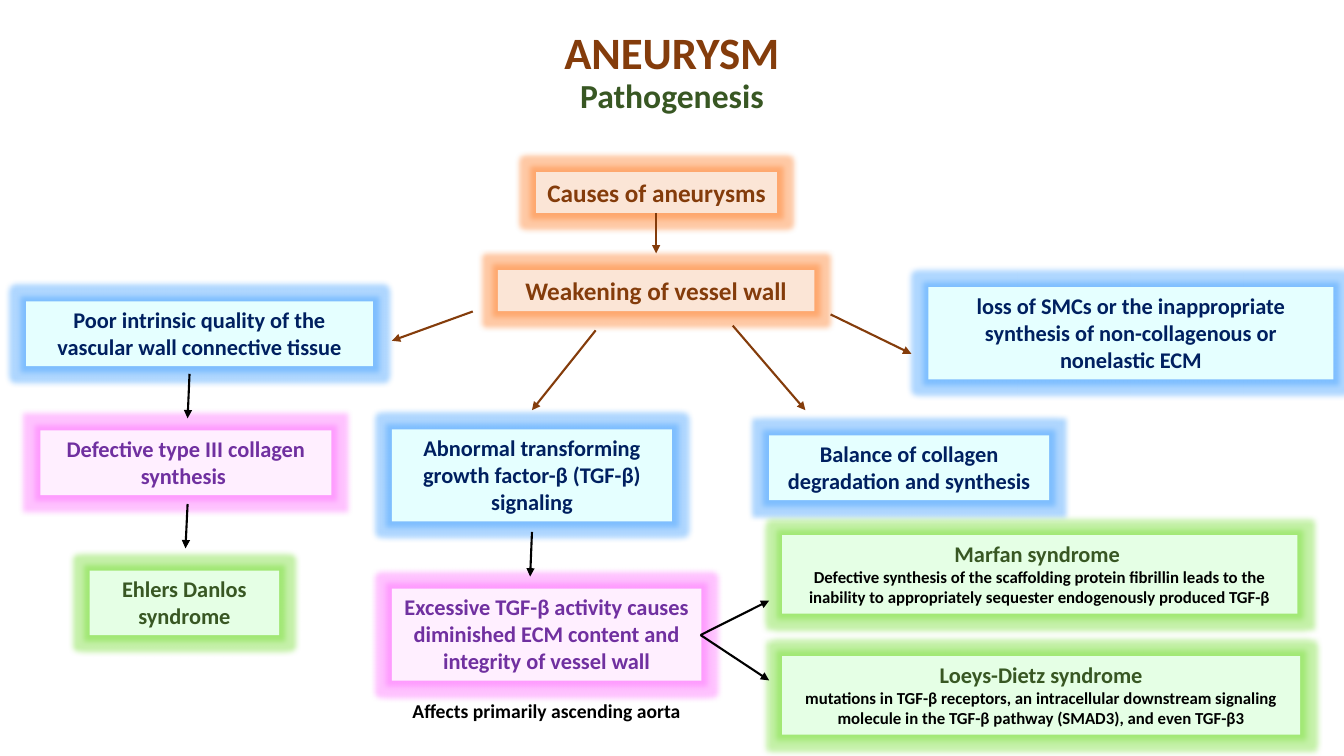
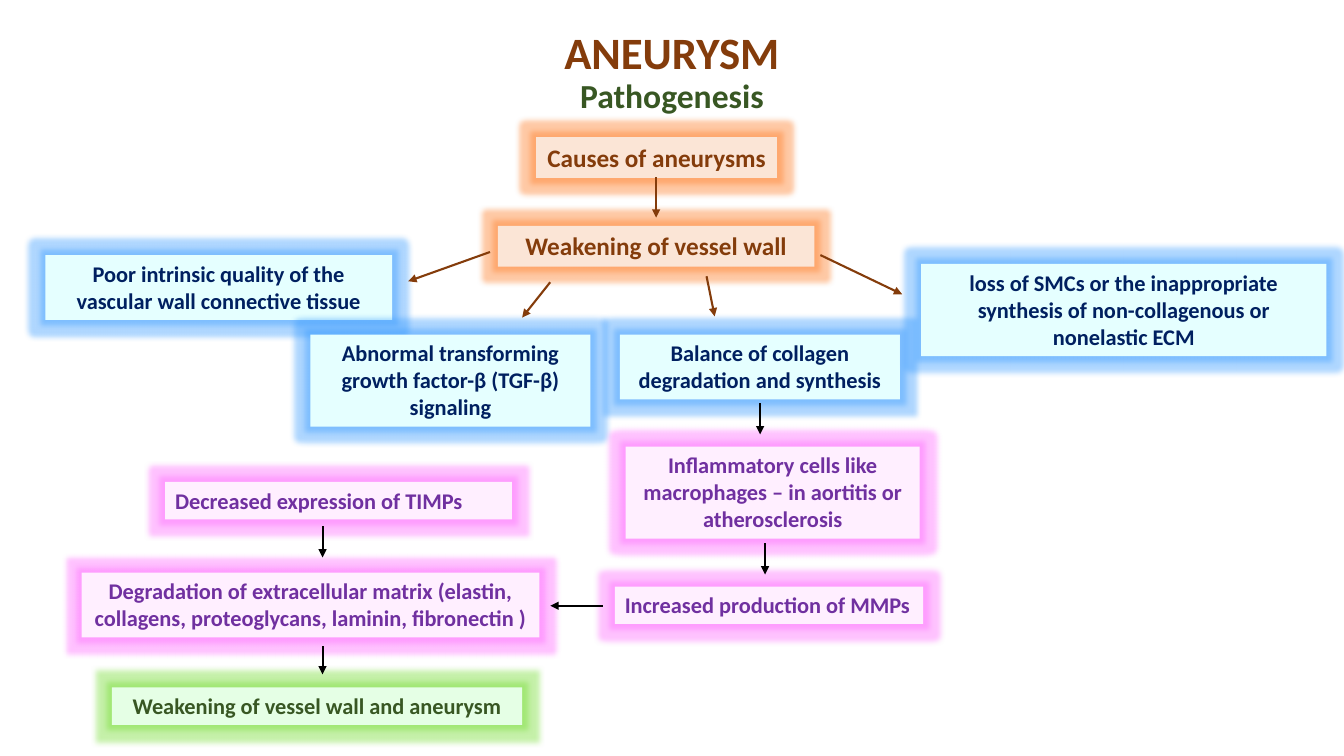
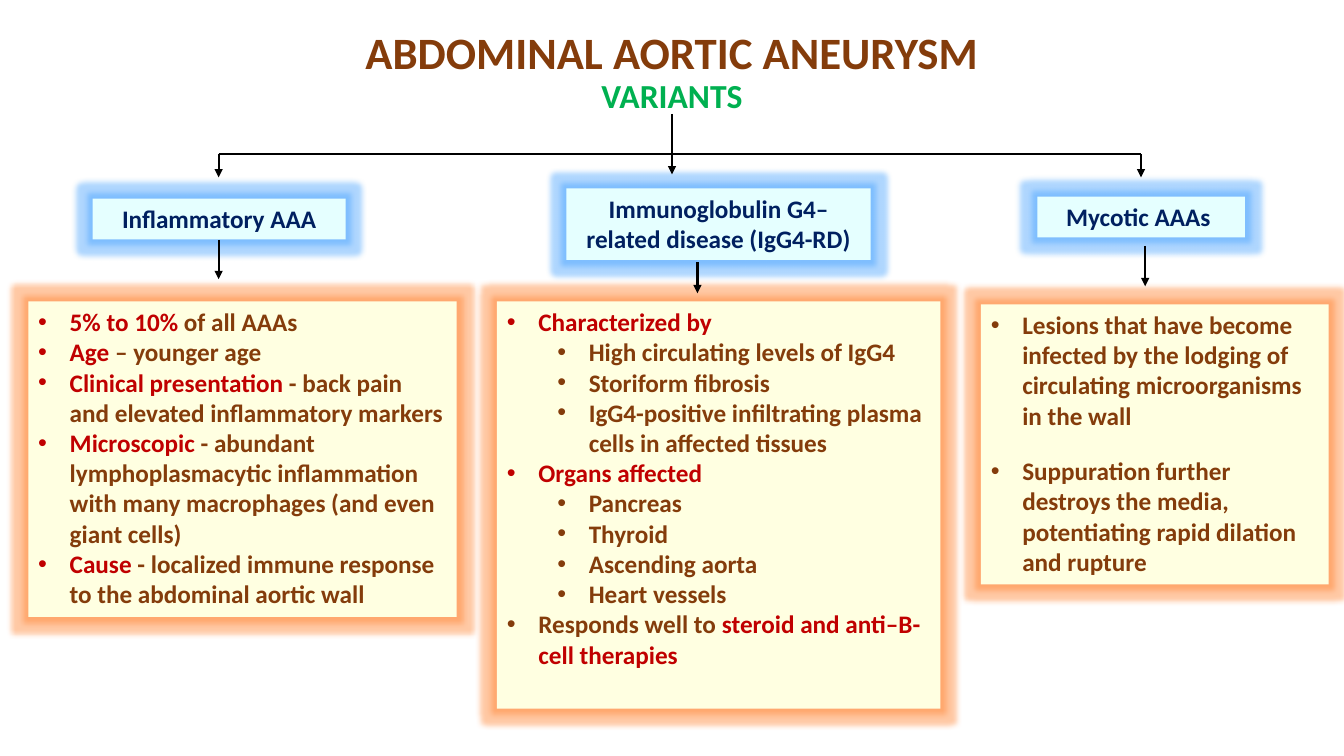
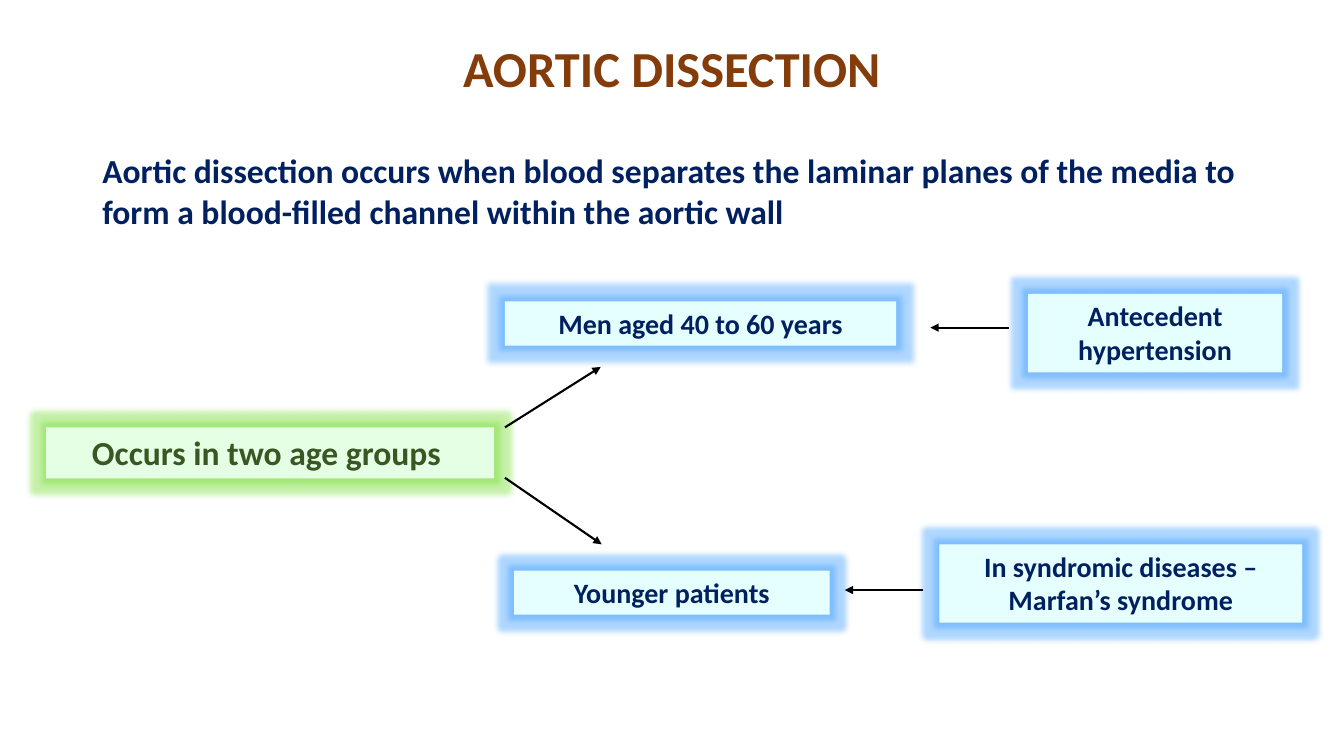
from lxml import etree
from pptx import Presentation
from pptx.dml.color import RGBColor
from pptx.enum.shapes import MSO_CONNECTOR, MSO_SHAPE
from pptx.enum.text import MSO_ANCHOR, PP_ALIGN
from pptx.oxml.ns import qn
from pptx.util import Pt

LEFT, CENTER = PP_ALIGN.LEFT, PP_ALIGN.CENTER
TOP, MIDDLE = MSO_ANCHOR.TOP, MSO_ANCHOR.MIDDLE
RECT, STRAIGHT = MSO_SHAPE.RECTANGLE, MSO_CONNECTOR.STRAIGHT

FONT = "Calibri"
BLACK = RGBColor(0x00, 0x00, 0x00)
BROWN = RGBColor(0x84, 0x3C, 0x0B)
NAVY = RGBColor(0x00, 0x20, 0x60)
PURPLE = RGBColor(0x70, 0x30, 0xA0)
DARK_GREEN = RGBColor(0x38, 0x57, 0x23)
BRIGHT_GREEN = RGBColor(0x00, 0xB0, 0x50)
RED = RGBColor(0xC0, 0x00, 0x00)
ORANGE_GLOW = RGBColor(0xFF, 0x78, 0x1E)

# Box styles: fill, text colour, glow
ORANGE = (RGBColor(0xFB, 0xE5, 0xD6), BROWN, ORANGE_GLOW)
BLUE = (RGBColor(0xE5, 0xFF, 0xFF), NAVY, RGBColor(0x37, 0x9B, 0xFF))
PINK = (RGBColor(0xFF, 0xEF, 0xFF), PURPLE, RGBColor(0xFF, 0x66, 0xFF))
GREEN = (RGBColor(0xE5, 0xFF, 0xE5), DARK_GREEN, RGBColor(0x6E, 0xDC, 0x28))
YELLOW = (RGBColor(0xFF, 0xFF, 0xE1), BROWN, ORANGE_GLOW)

LINE_RATIO = 1.22   # line height over font size
PADDING = 7.2       # top and bottom inset together
INDENT, LEVEL_STEP = 22.5, 36

# Boxes at the top of both pathogenesis slides: style, width, lines, size, text
CAUSES = [
    (ORANGE, 172, 1, 18, "Causes of aneurysms"),
    (ORANGE, 226, 1, 18, "Weakening of vessel wall"),
    (BLUE, 247.7, 2, 16, "Poor intrinsic quality of the vascular wall connective tissue"),
    (BLUE, 200, 3, 16, "Abnormal transforming growth factor-β (TGF-β) signaling"),
    (BLUE, 200, 2, 16, "Balance of collagen degradation and synthesis"),
    (BLUE, 289.4, 3, 16, "loss of SMCs or the inappropriate synthesis of "
                         "non-collagenous or nonelastic ECM"),
]

# Pathogenesis slides: box positions, then arrows as x1, y1, x2, y2
PATHOGENESIS = [
    {
        "causes_at": [(383, 123), (355.7, 193), (18.7, 215.3),
                      (280, 306.7), (549.4, 311), (663.1, 205.2)],
        "brown_arrows": [(468.7, 152, 468.7, 181), (425.5, 236, 380, 293),
                         (337.7, 222.5, 280, 243.4), (523.4, 232.6, 575.3, 293),
                         (593.3, 224.6, 651, 252.7)],
        # style, x, y, width, lines, text, alignment
        "effects": [
            (PINK, 28.8, 307.4, 208, 2, "Defective type III collagen synthesis ", CENTER),
            (GREEN, 64, 407.5, 135.4, 2, "Ehlers Danlos syndrome", CENTER),
            (PINK, 280, 420.5, 221, 3, "Excessive TGF-β activity causes diminished "
                                       "ECM content and integrity of vessel wall", CENTER),
        ],
        # x, y, width, name, explanation
        "syndromes": [
            (558.7, 382.3, 368, "Marfan syndrome ",
             "Defective synthesis of the scaffolding protein fibrillin leads to the "
             "inability to appropriately sequester endogenously produced TGF-β"),
            (558.7, 468.7, 370, "Loeys-Dietz syndrome",
             "mutations in TGF-β receptors, an intracellular downstream signaling "
             "molecule in the TGF-β pathway (SMAD3), and even TGF-β3"),
        ],
        "note": (280, 496, 221, "Affects primarily ascending aorta"),
        "black_arrows": [(135.4, 267, 134, 298.8), (134, 360, 132.5, 391.7),
                         (380, 380, 378.7, 411.8), (500.4, 453.6, 549.4, 429),
                         (500.4, 453.6, 549.4, 486)],
    },
    {
        "causes_at": [(383, 98), (355.7, 161.3), (32.4, 182.2),
                      (221.8, 239), (442.8, 239), (658, 188.6)],
        "brown_arrows": [(468.7, 126.7, 468.7, 155.5), (393, 201.6, 373, 226.8),
                         (350, 180, 291.6, 200.9), (504.7, 197.3, 510.5, 226),
                         (586, 182.2, 644.4, 210.2)],
        "effects": [
            (PINK, 447, 319, 210, 3,
             "Inflammatory cells like macrophages – in aortitis or atherosclerosis", CENTER),
            (PINK, 439.2, 419, 220.3, 1, "Increased production of MMPs", LEFT),
            (PINK, 118, 344.2, 247.7, 1, "Decreased expression of TIMPs", LEFT),
            (PINK, 58.3, 409, 327, 2, "Degradation of extracellular matrix (elastin, "
                                      "collagens, proteoglycans, laminin, fibronectin )", CENTER),
            (GREEN, 80, 491, 293, 1, "Weakening of vessel wall and aneurysm", CENTER),
        ],
        "syndromes": [],
        "note": None,
        "black_arrows": [(543, 288, 543, 310.3), (230.4, 375.8, 230.4, 398.2),
                         (546.5, 388, 546.5, 410.4), (230.4, 461.5, 230.4, 481.7),
                         (430.6, 432.7, 393.1, 432.7)],
    },
]

# Variants: heading (x, y, width, lines, text), list box, space after,
# items as (level, runs), arrow
VARIANTS = [
    {
        "heading": (66.2, 141.8, 180.7, 1, "Inflammatory AAA"),
        "box": (20.2, 215.3, 306, 225.4), "after": 0,
        "items": [
            (0, [("5% to 10%", RED), (" of all AAAs", BROWN)]),
            (0, [("Age", RED), (" – younger age", BROWN)]),
            (0, [("Clinical presentation", RED),
                 (" - back pain and elevated inflammatory markers", BROWN)]),
            (0, [("Microscopic", RED),
                 (" - abundant lymphoplasmacytic inflammation with many "
                  "macrophages (and even giant cells)", BROWN)]),
            (0, [("Cause ", RED),
                 ("- localized immune response to the abdominal aortic wall", BROWN)]),
        ],
        "arrow": (156.2, 171.4, 156.2, 199.4),
    },
    {
        "heading": (404.6, 134.6, 217.4, 2, "Immunoglobulin G4–related disease (IgG4-RD)"),
        "box": (355, 215.3, 316.8, 290.9), "after": 0,
        "items": [
            (0, [("Characterized by", RED)]),
            (1, [("High circulating levels of IgG4", BROWN)]),
            (1, [("Storiform fibrosis", BROWN)]),
            (1, [("IgG4-positive infiltrating plasma cells in affected tissues", BROWN)]),
            (0, [("Organs affected", RED)]),
            (1, [("Pancreas", BROWN)]),
            (1, [("Thyroid", BROWN)]),
            (1, [("Ascending aorta", BROWN)]),
            (1, [("Heart vessels", BROWN)]),
            (0, [("Responds well to ", BROWN), ("steroid and anti–B-cell therapies", RED)]),
        ],
        "arrow": (498.2, 187.2, 498.2, 209.5),
    },
    {
        "heading": (741, 140.4, 148.3, 1, "Mycotic AAAs "),
        "box": (700.6, 217.4, 248.4, 200), "after": 18,
        "items": [
            (0, [("Lesions that have become infected by the lodging of "
                  "circulating microorganisms in the wall", BROWN)]),
            (0, [("Suppuration further destroys the media, potentiating "
                  "rapid dilation and rupture", BROWN)]),
        ],
        "arrow": (818, 175.7, 818, 204.5),
    },
]
BRANCH_Y, BRANCH_LEFT, BRANCH_RIGHT = 110.2, 156.2, 815

# Dissection: style, x, y, width, lines, size, text
DEFINITION = ("Aortic dissection occurs when blood separates the laminar planes of the "
              "media to form a blood-filled channel within the aortic wall")
DISSECTION_BOXES = [
    (GREEN, 33, 305.3, 320, 1, 24, "Occurs in two age groups "),
    (BLUE, 360.7, 215.3, 279.4, 1, 20, "Men aged 40 to 60 years"),
    (BLUE, 367.2, 407.5, 225.4, 1, 20, "Younger patients"),
    (BLUE, 734.4, 210, 181.4, 2, 20, "Antecedent hypertension"),
    (BLUE, 671, 388.8, 259.2, 2, 20, "In syndromic diseases – Marfan’s syndrome"),
]
DISSECTION_ARROWS = [(720.7, 234, 664.6, 234), (659.5, 421.5, 603.4, 421.5),
                     (360.7, 305.3, 429.1, 262.1), (360.7, 341.3, 429.8, 388.8)]


def add_run(p, text, size, color):
    r = p.add_run()
    r.text = text
    r.font.name, r.font.size, r.font.bold = FONT, Pt(size), True
    r.font.color.rgb = color


def height(lines, size):
    return lines * size * LINE_RATIO + PADDING


def text_box(slide, x, y, w, h, align, anchor=TOP):
    """Add a wrapping text box and return its first paragraph."""
    tf = slide.shapes.add_textbox(Pt(x), Pt(y), Pt(w), Pt(h)).text_frame
    tf.word_wrap = True
    tf.vertical_anchor = anchor
    p = tf.paragraphs[0]
    p.alignment = align
    return p


def glow_box(slide, style, x, y, w, h):
    """Add a borderless rectangle with a soft glow and return its text frame."""
    fill, _, glow_color = style
    s = slide.shapes.add_shape(RECT, Pt(x), Pt(y), Pt(w), Pt(h))
    s.fill.solid()
    s.fill.fore_color.rgb = fill
    s.line.fill.background()
    s.shadow.inherit = False
    effects = s._element.spPr.find(qn("a:effectLst"))
    glow = etree.SubElement(effects, qn("a:glow"), rad=str(Pt(8)))
    color = etree.SubElement(glow, qn("a:srgbClr"), val=str(glow_color))
    etree.SubElement(color, qn("a:alpha"), val="40000")
    tf = s.text_frame
    tf.word_wrap = True
    tf.vertical_anchor = TOP
    return tf


def label_box(slide, style, x, y, w, lines, size, text, align=CENTER):
    p = glow_box(slide, style, x, y, w, height(lines, size)).paragraphs[0]
    p.alignment = align
    add_run(p, text, size, style[1])


def add_line(slide, ends, color=BLACK, arrow=True):
    c = slide.shapes.add_connector(STRAIGHT, *(Pt(v) for v in ends))
    c.line.color.rgb = color
    c.line.width = Pt(1.5)
    if arrow:
        etree.SubElement(c.line._get_or_add_ln(), qn("a:tailEnd"), type="triangle")
    etree.SubElement(c._element.spPr, qn("a:effectLst"))


def bullet_list(tf, items, after):
    for i, (level, runs) in enumerate(items):
        p = tf.paragraphs[0] if i == 0 else tf.add_paragraph()
        p.alignment, p.level = LEFT, level
        p.space_after = Pt(after)
        pPr = p._p.get_or_add_pPr()
        pPr.set("marL", str(Pt(INDENT + level * LEVEL_STEP)))
        pPr.set("indent", str(-Pt(INDENT)))
        etree.SubElement(pPr, qn("a:buFont"), typeface="Arial")
        etree.SubElement(pPr, qn("a:buChar"), char="•")
        for text, color in runs:
            add_run(p, text, 18, color)


def new_slide(prs, title, size=32, subtitle=None, sub_color=DARK_GREEN, y=0, h=104.4):
    slide = prs.slides.add_slide(prs.slide_layouts[6])
    p = text_box(slide, 66, y, 828, h, CENTER, MIDDLE)
    p.line_spacing = 0.9
    add_run(p, title, size, BROWN)
    if subtitle:
        p.add_line_break()
        add_run(p, subtitle, 24, sub_color)
    return slide


def pathogenesis_slide(prs, data):
    slide = new_slide(prs, "ANEURYSM", subtitle="Pathogenesis")
    for (style, w, lines, size, text), (x, y) in zip(CAUSES, data["causes_at"]):
        label_box(slide, style, x, y, w, lines, size, text)
    for ends in data["brown_arrows"]:
        add_line(slide, ends, BROWN)
    for style, x, y, w, lines, text, align in data["effects"]:
        label_box(slide, style, x, y, w, lines, 16, text, align)
    for x, y, w, name, explanation in data["syndromes"]:
        tf = glow_box(slide, GREEN, x, y, w, height(1, 16 + 2 * 12))
        for p, text, size, color in ((tf.paragraphs[0], name, 16, DARK_GREEN),
                                     (tf.add_paragraph(), explanation, 12, BLACK)):
            p.alignment = CENTER
            add_run(p, text, size, color)
    for ends in data["black_arrows"]:
        add_line(slide, ends)
    if data["note"]:
        x, y, w, text = data["note"]
        add_run(text_box(slide, x, y, w, height(1, 14), CENTER), text, 14, BLACK)


def variants_slide(prs):
    slide = new_slide(prs, "ABDOMINAL AORTIC ANEURYSM",
                      subtitle="VARIANTS", sub_color=BRIGHT_GREEN)
    for variant in VARIANTS:
        x, y, w, lines, text = variant["heading"]
        label_box(slide, BLUE, x, y, w, lines, 18, text)
        bullet_list(glow_box(slide, YELLOW, *variant["box"]),
                    variant["items"], variant["after"])
    for variant in VARIANTS:
        add_line(slide, variant["arrow"])
    # Branches from the subtitle to the headings
    add_line(slide, (BRANCH_LEFT, BRANCH_Y, BRANCH_RIGHT, BRANCH_Y), arrow=False)
    add_line(slide, (480, 81.4, 480, 124.6))
    for x in (BRANCH_LEFT, BRANCH_RIGHT):
        add_line(slide, (x, BRANCH_Y, x, BRANCH_Y + 16.5))


def dissection_slide(prs):
    slide = new_slide(prs, "AORTIC DISSECTION", size=36, y=32.4, h=37.4)
    add_run(text_box(slide, 66, 103.7, 864.7, height(2, 24), LEFT), DEFINITION, 24, NAVY)
    for box in DISSECTION_BOXES:
        label_box(slide, *box)
    for ends in DISSECTION_ARROWS:
        add_line(slide, ends)


def main():
    prs = Presentation()
    prs.slide_width, prs.slide_height = Pt(960), Pt(540)
    for data in PATHOGENESIS:
        pathogenesis_slide(prs, data)
    variants_slide(prs)
    dissection_slide(prs)
    prs.save("out.pptx")


if __name__ == "__main__":
    main()
